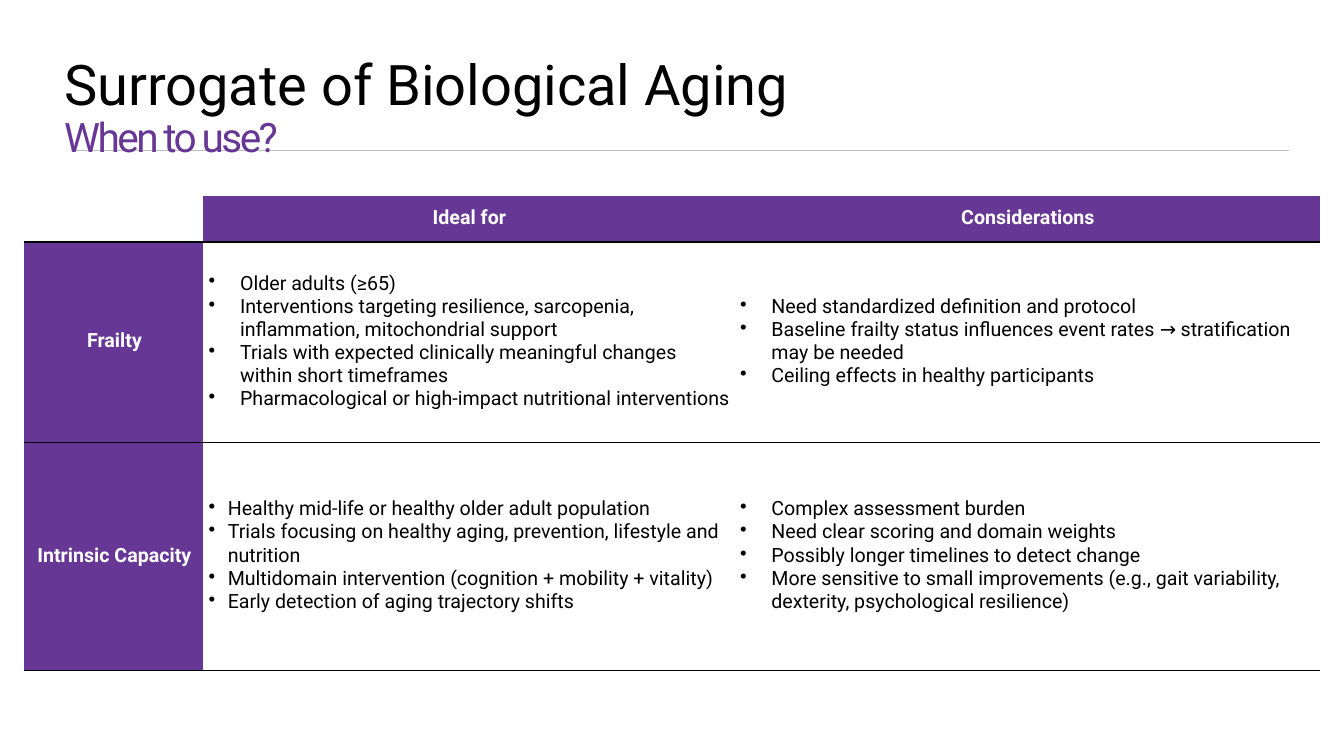
import lxml.etree
import pptx
import pptx.dml.color
import pptx.enum.shapes
import pptx.enum.text
import pptx.oxml.ns
import pptx.util
from pptx.util import Cm

PURPLE = "663795"
BLACK = "000000"
WHITE = "FFFFFF"
FONT = "Roboto"
NO_STYLE = "{2D5ABB26-0587-4C30-8999-92F81FD0307C}"

COLUMN_WIDTHS = [4.5, 13.39, 14.76]
ROW_HEIGHTS = [1.17, 5.05, 5.74]
HEADERS = ["Ideal for", "Considerations"]
MEASURES = [
    ("Frailty", [
        (0.79, ["Older adults (≥65)",
                "Interventions targeting resilience, sarcopenia, inflammation, mitochondrial support",
                "Trials with expected clinically meaningful changes within short timeframes",
                "Pharmacological or high-impact nutritional interventions"]),
        (0.79, ["Need standardized definition and protocol",
                "Baseline frailty status influences event rates → stratification may be needed",
                "Ceiling effects in healthy participants"]),
    ]),
    ("Intrinsic Capacity", [
        (0.48, ["Healthy mid-life or healthy older adult population",
                "Trials focusing on healthy aging, prevention, lifestyle and nutrition",
                "Multidomain intervention (cognition + mobility + vitality)",
                "Early detection of aging trajectory shifts"]),
        (0.79, ["Complex assessment burden",
                "Need clear scoring and domain weights",
                "Possibly longer timelines to detect change",
                "More sensitive to small improvements (e.g., gait variability, dexterity, psychological resilience)"]),
    ]),
]


def color(value):
    return pptx.dml.color.RGBColor.from_string(value)


def add_xml(parent, tag, **attributes):
    return lxml.etree.SubElement(parent, pptx.oxml.ns.qn(tag), attributes)


def add_text(para, text, size=14, fill=BLACK, bold=False, spacing=None):
    span = para.add_run()
    span.text = text
    span.font.name = FONT
    span.font.size = pptx.util.Pt(size)
    span.font.bold = bold
    span.font.color.rgb = color(fill)
    if spacing is not None:
        span.font._element.set("spc", str(round(spacing * 100)))


def add_rule(page, left, right, top):
    rule = page.shapes.add_connector(
        pptx.enum.shapes.MSO_CONNECTOR.STRAIGHT, Cm(left), Cm(top), Cm(right), Cm(top))
    rule.line.color.rgb = color("BFBFBF")
    rule.line.width = pptx.util.Pt(0.5)
    add_xml(rule._element.spPr, "a:effectLst")


def add_title(page):
    box = page.shapes.add_textbox(Cm(1.37), Cm(1.24), Cm(29.21), Cm(3.68))
    frame = box.text_frame
    frame.word_wrap = True
    frame.margin_top = Cm(0.2)
    para = frame.paragraphs[0]
    para.line_spacing = 0.9
    add_text(para, "Surrogate of Biological Aging", size=40)
    para.add_line_break()
    add_text(para, "When to use?", size=29, fill=PURPLE, spacing=-1.9)


def format_cell(cell, fill=None):
    cell.margin_left = cell.margin_top = Cm(0.15)
    cell.margin_right = Cm(0.1)
    cell.margin_bottom = Cm(0.2)
    cell.vertical_anchor = pptx.enum.text.MSO_ANCHOR.MIDDLE
    border = add_xml(cell._tc.get_or_add_tcPr(), "a:lnB", w="12700")
    add_xml(add_xml(border, "a:solidFill"), "a:srgbClr", val=BLACK)
    if fill:
        cell.fill.solid()
        cell.fill.fore_color.rgb = color(fill)
    else:
        cell.fill.background()


def fill_heading(cell, text):
    format_cell(cell, PURPLE)
    para = cell.text_frame.paragraphs[0]
    para.alignment = pptx.enum.text.PP_ALIGN.CENTER
    add_text(para, text, fill=WHITE, bold=True)


def fill_bullets(cell, indent, items):
    format_cell(cell)
    frame = cell.text_frame
    for index, item in enumerate(items):
        para = frame.add_paragraph() if index else frame.paragraphs[0]
        properties = para._p.get_or_add_pPr()
        properties.set("marL", str(Cm(indent)))
        properties.set("indent", str(-Cm(indent)))
        add_xml(properties, "a:buChar", char="•")
        add_text(para, item)


def add_comparison(page):
    frame = page.shapes.add_table(
        len(ROW_HEIGHTS), len(COLUMN_WIDTHS), Cm(0.61), Cm(4.93),
        Cm(sum(COLUMN_WIDTHS)), Cm(sum(ROW_HEIGHTS)))
    table = frame.table
    table.horz_banding = False
    table._tbl.tblPr.find(pptx.oxml.ns.qn("a:tableStyleId")).text = NO_STYLE
    for column, width in zip(table.columns, COLUMN_WIDTHS):
        column.width = Cm(width)
    for row, height in zip(table.rows, ROW_HEIGHTS):
        row.height = Cm(height)
    format_cell(table.cell(0, 0))
    for column, header in enumerate(HEADERS, 1):
        fill_heading(table.cell(0, column), header)
    for row, (measure, lists) in enumerate(MEASURES, 1):
        fill_heading(table.cell(row, 0), measure)
        for column, (indent, items) in enumerate(lists, 1):
            fill_bullets(table.cell(row, column), indent, items)


def main():
    deck = pptx.Presentation()
    deck.slide_width = Cm(33.87)
    deck.slide_height = Cm(19.05)
    page = deck.slides.add_slide(deck.slide_layouts[6])
    add_rule(page, 1.78, 32.49, 3.78)
    add_title(page)
    add_comparison(page)
    deck.save("out.pptx")


if __name__ == "__main__":
    main()
